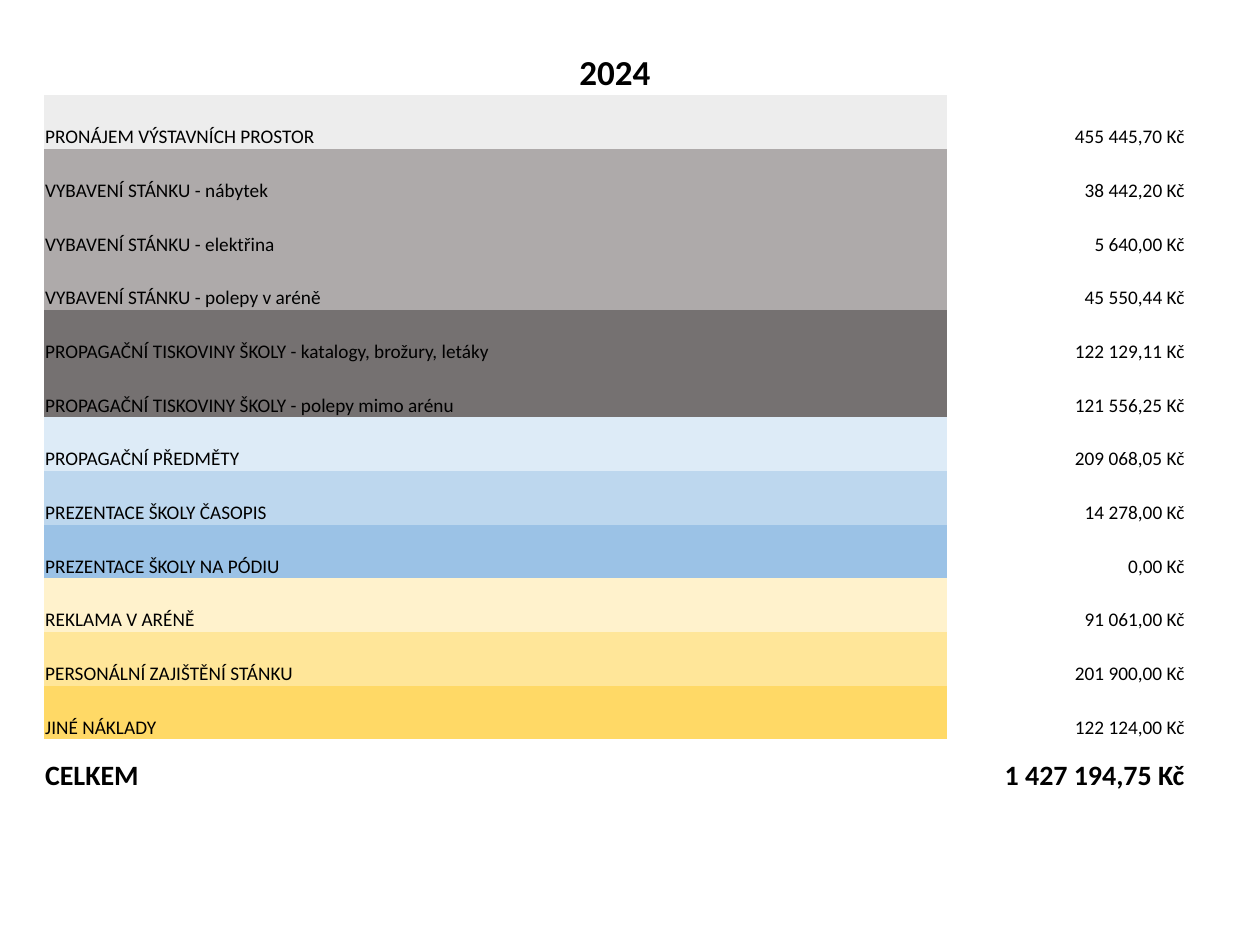
from pptx import Presentation
from pptx import util as u
from pptx.dml import color
from pptx.enum import text
from pptx.oxml import ns

NO_STYLE_NO_GRID = "{2D5ABB26-0587-4C30-8999-92F81FD0307C}"

COSTS = [
    ("PRONÁJEM VÝSTAVNÍCH PROSTOR", "455 445,70 Kč", "EDEDED"),
    ("VYBAVENÍ STÁNKU - nábytek", "38 442,20 Kč", "AEAAAA"),
    ("VYBAVENÍ STÁNKU - elektřina", "5 640,00 Kč", "AEAAAA"),
    ("VYBAVENÍ STÁNKU - polepy v aréně", "45 550,44 Kč", "AEAAAA"),
    ("PROPAGAČNÍ TISKOVINY ŠKOLY - katalogy, brožury, letáky", "122 129,11 Kč", "757171"),
    ("PROPAGAČNÍ TISKOVINY ŠKOLY - polepy mimo arénu", "121 556,25 Kč", "757171"),
    ("PROPAGAČNÍ PŘEDMĚTY", "209 068,05 Kč", "DDEBF7"),
    ("PREZENTACE ŠKOLY ČASOPIS", "14 278,00 Kč", "BDD7EE"),
    ("PREZENTACE ŠKOLY NA PÓDIU", "0,00 Kč", "9BC2E6"),
    ("REKLAMA V ARÉNĚ", "91 061,00 Kč", "FFF2CC"),
    ("PERSONÁLNÍ ZAJIŠTĚNÍ STÁNKU", "201 900,00 Kč", "FFE699"),
    ("JINÉ NÁKLADY", "122 124,00 Kč", "FFD966"),
]


def rgb(value):
    return color.RGBColor.from_string(value)


class BudgetSlide:
    font_name = "Calibri"
    ink = "000000"
    inset = u.Cm(0.02)

    def __init__(self, deck):
        self.slide = deck.slides.add_slide(deck.slide_layouts[6])

    def table(self, left, top, widths, height, row_count):
        frame = self.slide.shapes.add_table(
            row_count, len(widths), left, top, sum(widths), height)
        style = next(frame.element.iter(ns.qn("a:tableStyleId")))
        style.text = NO_STYLE_NO_GRID
        table = frame.table
        table.first_row = False
        table.horz_banding = False
        for column, width in zip(table.columns, widths):
            column.width = width
        for row in table.rows:
            row.height = height // row_count
        return table

    def cell(self, cell, words, align, size=11, bold=False, fill=None):
        cell.margin_left = cell.margin_right = cell.margin_top = self.inset
        cell.margin_bottom = 0
        cell.vertical_anchor = text.MSO_ANCHOR.BOTTOM
        if fill:
            cell.fill.solid()
            cell.fill.fore_color.rgb = rgb(fill)
        else:
            cell.fill.background()
        para = cell.text_frame.paragraphs[0]
        para.text = words
        para.alignment = align
        for span in para.runs:
            span.font.name = self.font_name
            span.font.size = u.Pt(size)
            span.font.bold = bold
            span.font.color.rgb = rgb(self.ink)

    def cost_row(self, table, index, label, amount, fill=None, **style):
        self.cell(table.cell(index, 0), label, text.PP_ALIGN.LEFT, fill=fill, **style)
        self.cell(table.cell(index, 1), amount, text.PP_ALIGN.RIGHT, **style)


def main():
    deck = Presentation()
    deck.slide_width = u.Cm(25.4)
    deck.slide_height = u.Cm(19.05)
    budget = BudgetSlide(deck)

    row_count = len(COSTS) + 2
    table = budget.table(u.Cm(0.89), u.Cm(0.84), [u.Cm(18.21), u.Cm(4.8)],
                         u.Cm(15.16), row_count)
    table.cell(0, 0).merge(table.cell(0, 1))
    budget.cell(table.cell(0, 0), "2024", text.PP_ALIGN.CENTER, size=20, bold=True)
    for index, (label, amount, fill) in enumerate(COSTS, start=1):
        budget.cost_row(table, index, label, amount, fill)
    budget.cost_row(table, row_count - 1, "CELKEM", "1 427 194,75 Kč", size=16, bold=True)

    deck.save("out.pptx")


if __name__ == "__main__":
    main()
